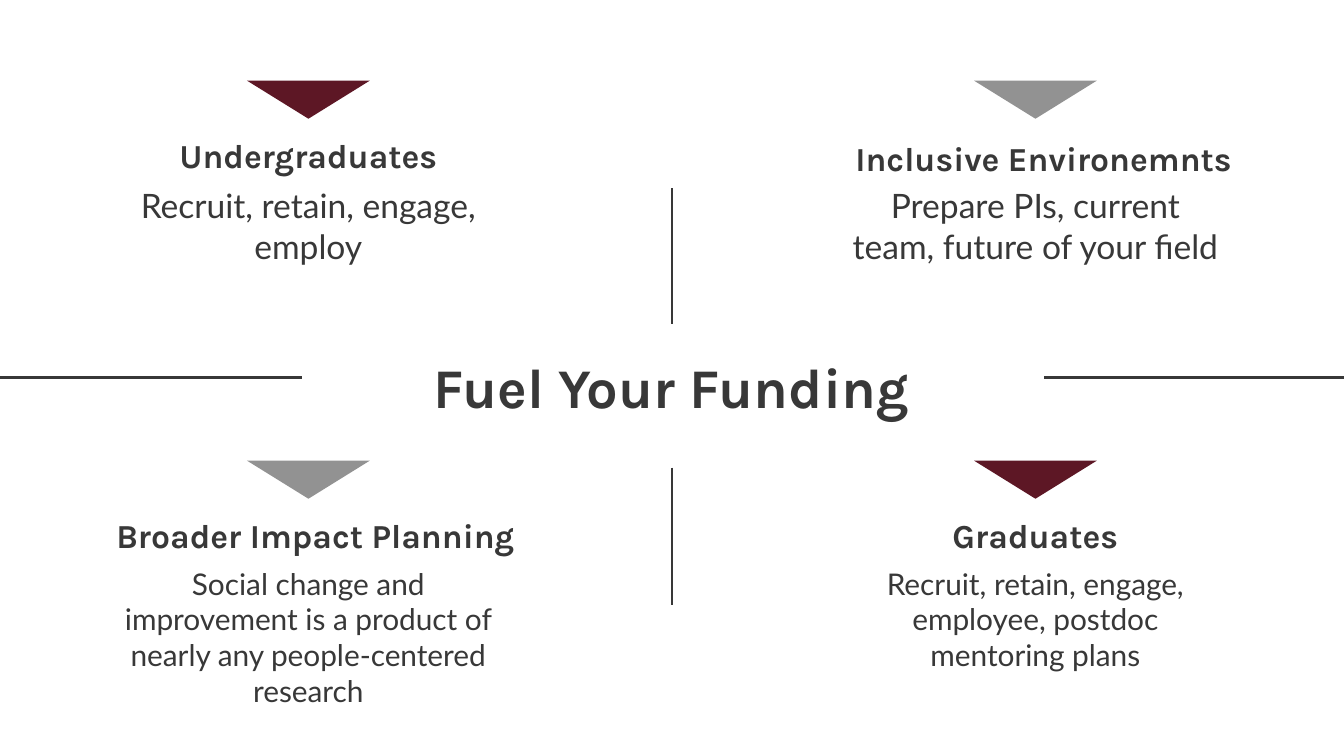
import pptx
import pptx.util
import pptx.dml.color
import pptx.enum.shapes
import pptx.enum.text
import pptx.oxml.ns
import lxml.etree
from dataclasses import dataclass

Pt = pptx.util.Pt


@dataclass(frozen=True)
class Theme:
    ink: str = "383838"
    wine: str = "5D1725"
    gray: str = "929292"
    head: str = "Karla"
    body: str = "Lato"
    big: int = 30
    mid: int = 18
    small: int = 16


theme = Theme()


def color(code):
    return pptx.dml.color.RGBColor.from_string(code)


def add_text(slide, text, box, font, size, bold=False, middle=False):
    """Centred text; box is left, top, width, height."""
    frame = slide.shapes.add_textbox(*map(Pt, box)).text_frame
    frame.word_wrap = True
    frame.margin_left = frame.margin_right = Pt(7.2)
    frame.margin_top = frame.margin_bottom = Pt(7.2)
    anchor = pptx.enum.text.MSO_ANCHOR
    frame.vertical_anchor = anchor.MIDDLE if middle else anchor.TOP
    frame.text = text
    para = frame.paragraphs[0]
    para.alignment = pptx.enum.text.PP_ALIGN.CENTER
    face = para.runs[0].font
    face.name, face.size, face.bold = font, Pt(size), bold
    face.color.rgb = color(theme.ink)


def add_mark(slide, mid, top, fill):
    """Triangle that points down."""
    wide, high = 65.8, 20.4
    mark = slide.shapes.add_shape(
        pptx.enum.shapes.MSO_SHAPE.ISOSCELES_TRIANGLE,
        Pt(mid - wide / 2), Pt(top), Pt(wide), Pt(high))
    mark.rotation = 180
    mark.shadow.inherit = False
    mark.fill.solid()
    mark.fill.fore_color.rgb = color(fill)
    mark.line.fill.background()


def add_line(slide, *ends):
    line = slide.shapes.add_connector(
        pptx.enum.shapes.MSO_CONNECTOR.STRAIGHT, *map(Pt, ends))
    line.line.color.rgb = color(theme.ink)
    line.line.width = Pt(1.5)
    props = line._element.spPr
    lxml.etree.SubElement(props, pptx.oxml.ns.qn("a:effectLst"))


def add_block(slide, mid, top, fill, head, text, size, shift=(0, 0)):
    """Mark, heading and text; shift moves the heading."""
    add_mark(slide, mid, top, fill)
    wide = 271.4
    add_text(slide, head,
             (mid + shift[0] - wide / 2, top + 26.7 + shift[1], wide, 26.6),
             theme.head, theme.mid, bold=True, middle=True)
    wide = 215.3
    add_text(slide, text, (mid - wide / 2, top + 48.8, wide, 63.4),
             theme.body, size)


def main():
    deck = pptx.Presentation()
    deck.slide_width, deck.slide_height = Pt(720), Pt(405)
    slide = deck.slides.add_slide(deck.slide_layouts[6])

    # Centre title
    add_text(slide, "Fuel Your Funding", (108.7, 181.4, 501.8, 41.8),
             theme.head, theme.big, bold=True)

    # Four blocks
    left, right = 165.2, 554.7
    upper, lower = 43.2, 246.8
    add_block(slide, left, upper, theme.wine, "Undergraduates",
              "Recruit, retain, engage, employ", theme.mid)
    add_block(slide, left, lower, theme.gray, "Broader Impact Planning",
              "Social change and improvement is a product of nearly any "
              "people-centered research", theme.small, (3.8, 0))
    add_block(slide, right, upper, theme.gray, "Inclusive Environemnts",
              "Prepare PIs, current team, future of your field",
              theme.mid, (4.4, 1.4))
    add_block(slide, right, lower, theme.wine, "Graduates",
              "Recruit, retain, engage, employee, postdoc mentoring plans",
              theme.small)

    # Lines around the title
    for start, end in ((-1.4, 162), (559.4, 720)):
        add_line(slide, start, 202.3, end, 202.3)
    for start, end in ((100.8, 173.5), (250.6, 324)):
        add_line(slide, 360, start, 360, end)

    deck.save("out.pptx")


if __name__ == "__main__":
    main()
